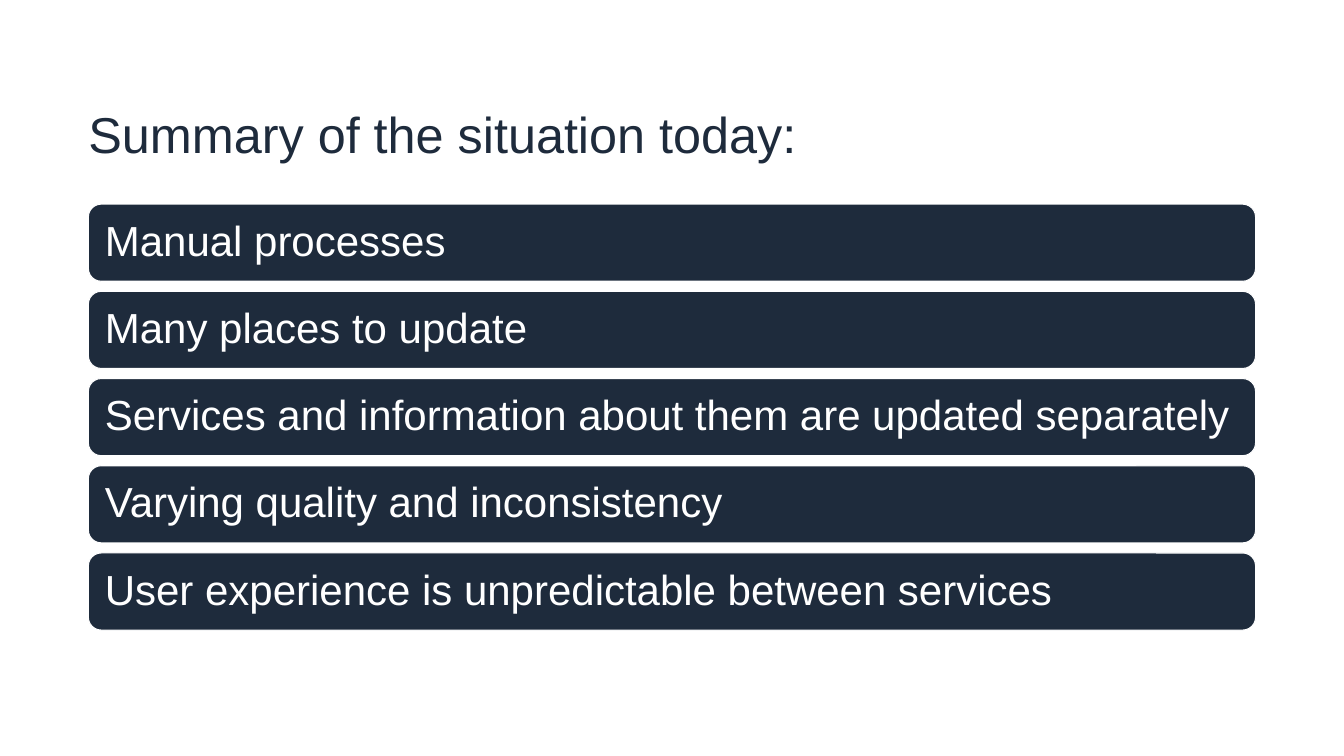
from pptx import Presentation
from pptx.dml.color import RGBColor
from pptx.enum.shapes import MSO_SHAPE as SHAPE
from pptx.enum.text import MSO_ANCHOR as ANCHOR, PP_ALIGN as ALIGN
from pptx.util import Cm, Pt

NAVY, WHITE = "1E2B3C", "FFFFFF"
LEFT, WIDTH = 2.97, 39.22
POINTS = [
    "Manual processes",
    "Many places to update",
    "Services and information about them are updated separately",
    "Varying quality and inconsistency",
    "User experience is unpredictable between services",
]


def rgb(value):
    """Return the colour for a hex string."""
    return RGBColor.from_string(value)


def write(sp, text, size=40, color=WHITE, anchor=ANCHOR.MIDDLE, inset=0.43):
    """Put one left-aligned, formatted paragraph in a shape."""
    tf = sp.text_frame
    tf.word_wrap = True
    tf.vertical_anchor = anchor
    tf.margin_left = tf.margin_right = tf.margin_top = tf.margin_bottom = Cm(inset)
    p = tf.paragraphs[0]
    p.alignment = ALIGN.LEFT
    p.line_spacing = 0.9
    r = p.add_run()
    r.text = text
    r.font.name = "Arial"
    r.font.size = Pt(size)
    r.font.color.rgb = rgb(color)


def add_title(s, text, x, y, w, h):
    """Move and fill the title placeholder."""
    sp = s.shapes.title
    sp.left, sp.top, sp.width, sp.height = Cm(x), Cm(y), Cm(w), Cm(h)
    write(sp, text, size=48, color=NAVY, anchor=ANCHOR.BOTTOM, inset=0)


def add_bars(s, points, x, y, w, h, gap=0.34):
    """Stack one rounded bar per point, evenly spaced to fill the box."""
    bar_h = (h - gap * (len(points) - 1)) / len(points)
    for i, point in enumerate(points):
        top = y + i * (bar_h + gap)
        sp = s.shapes.add_shape(SHAPE.ROUNDED_RECTANGLE, Cm(x), Cm(top), Cm(w), Cm(bar_h))
        sp.shadow.inherit = False
        sp.fill.solid()
        sp.fill.fore_color.rgb = rgb(NAVY)
        sp.line.color.rgb = rgb(WHITE)
        sp.line.width = Pt(1)
        write(sp, point)


def main():
    """Build and save the slide."""
    prs = Presentation()
    prs.slide_width, prs.slide_height = Cm(45.16), Cm(25.4)
    s = prs.slides.add_slide(prs.slide_layouts[5])
    add_bars(s, POINTS, LEFT, 6.86, WIDTH, 14.31)
    add_title(s, "Summary of the situation today:", LEFT, 1.6, WIDTH, 3.94)
    prs.save("out.pptx")


if __name__ == "__main__":
    main()
